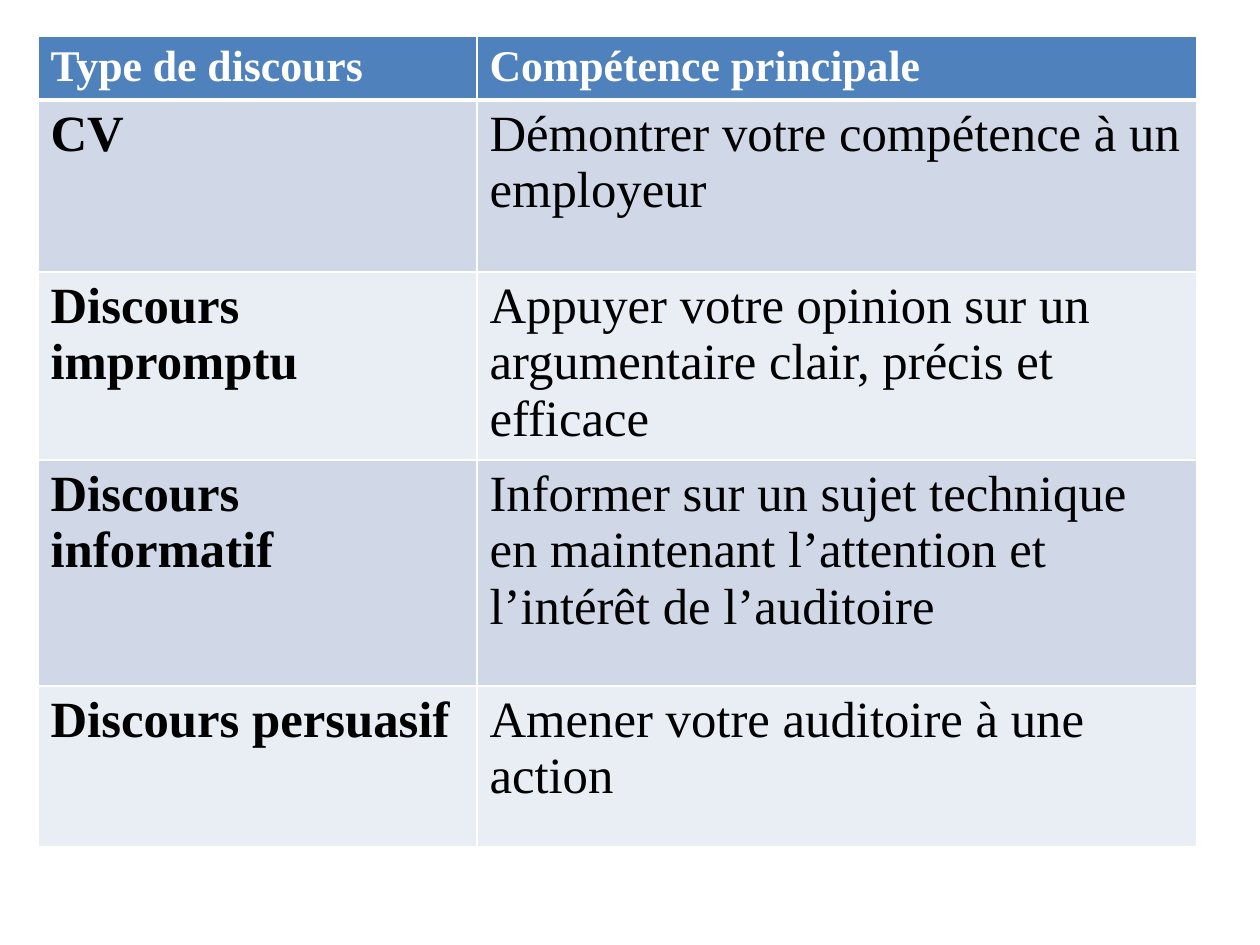
from lxml import etree
from pptx import Presentation
from pptx import util as u
from pptx.dml.color import RGBColor
from pptx.oxml import ns

ROWS = [
    ("Type de discours", "Compétence principale"),
    ("CV", "Démontrer votre compétence à un employeur"),
    ("Discours impromptu", "Appuyer votre opinion sur un argumentaire clair, précis et efficace"),
    ("Discours informatif", "Informer sur un sujet technique en maintenant l’attention et l’intérêt de l’auditoire"),
    ("Discours persuasif", "Amener votre auditoire à une action"),
]
COLUMN_WIDTHS = [439, 720]
ROW_HEIGHTS = [64, 172, 188, 226, 161]
LEFT, TOP = 38, 36
PX = u.Inches(1) / 126

FONT = "Times New Roman"
WHITE = RGBColor(0xFF, 0xFF, 0xFF)
BLACK = RGBColor(0x00, 0x00, 0x00)
HEADER = RGBColor(0x4F, 0x81, 0xBD)
BANDS = [RGBColor(0xE9, 0xED, 0xF4), RGBColor(0xD0, 0xD8, 0xE8)]


def px(length):
    return u.Emu(round(length * PX))


def set_borders(cell, widths):
    properties = cell._tc.get_or_add_tcPr()
    for position, (side, width) in enumerate(widths.items()):
        line = etree.Element(ns.qn(f"a:ln{side}"), w=str(u.Pt(width)))
        fill = etree.SubElement(line, ns.qn("a:solidFill"))
        etree.SubElement(fill, ns.qn("a:srgbClr"), val=str(WHITE))
        properties.insert(position, line)


def fill_cell(cell, wording, row, column):
    is_header = row == 0
    cell.text = wording
    cell.fill.solid()
    cell.fill.fore_color.rgb = HEADER if is_header else BANDS[row % 2]
    font = cell.text_frame.paragraphs[0].font
    font.name = FONT
    font.size = u.Pt(25 if is_header else 29)
    font.bold = is_header or column == 0
    font.color.rgb = WHITE if is_header else BLACK
    set_borders(cell, {"L": 1, "R": 1, "T": 3 if row == 1 else 1, "B": 3 if is_header else 1})


def main():
    presentation = Presentation()
    presentation.slide_width = u.Inches(10)
    presentation.slide_height = u.Inches(7.5)
    slide = presentation.slides.add_slide(presentation.slide_layouts[6])
    table = slide.shapes.add_table(
        len(ROWS), len(COLUMN_WIDTHS), px(LEFT), px(TOP),
        px(sum(COLUMN_WIDTHS)), px(sum(ROW_HEIGHTS)),
    ).table
    for column, width in zip(table.columns, COLUMN_WIDTHS):
        column.width = px(width)
    for row, height in zip(table.rows, ROW_HEIGHTS):
        row.height = px(height)
    for row, wordings in enumerate(ROWS):
        for column, wording in enumerate(wordings):
            fill_cell(table.cell(row, column), wording, row, column)
    presentation.save("out.pptx")


if __name__ == "__main__":
    main()
